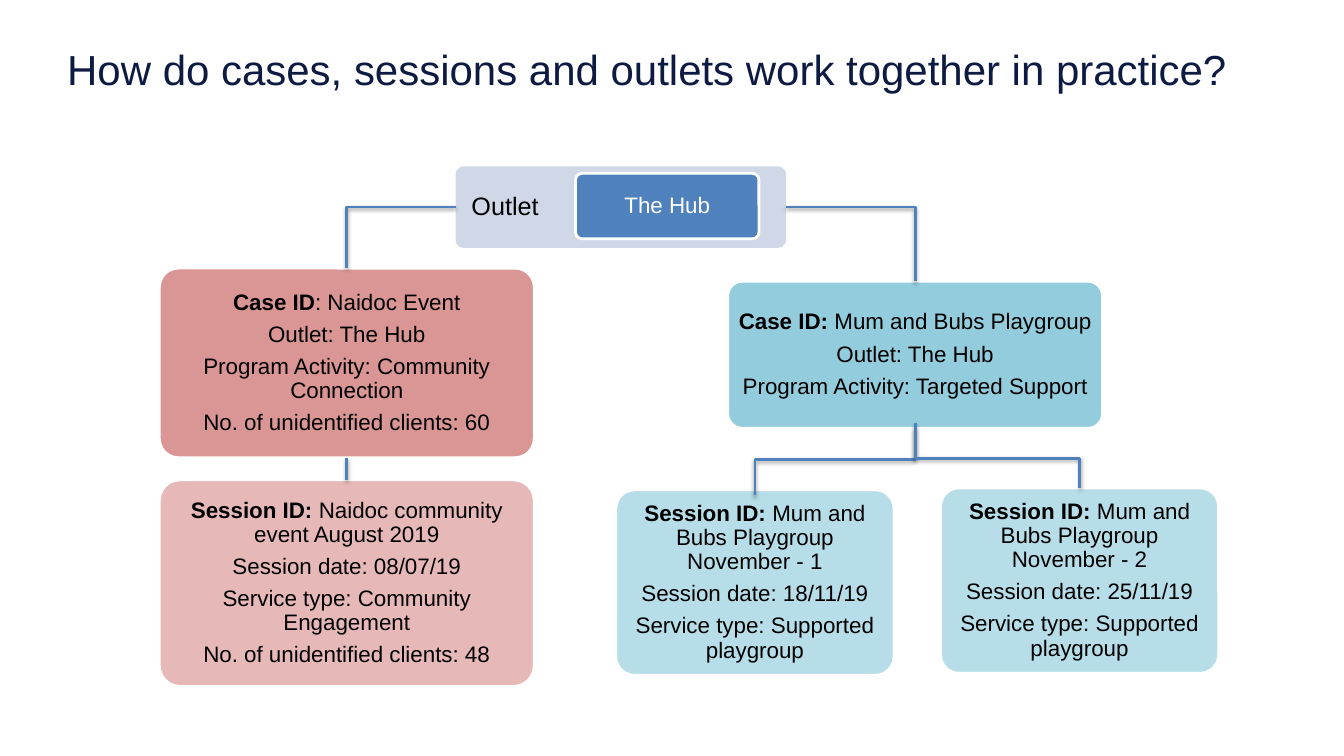
from lxml.etree import SubElement
from pptx import Presentation
from pptx.dml.color import RGBColor
from pptx.enum.shapes import MSO_CONNECTOR, MSO_SHAPE
from pptx.enum.text import MSO_ANCHOR, PP_ALIGN
from pptx.oxml.ns import qn
from pptx.util import Pt

HEX = {
    "navy": "0D1B43", "black": "000000", "white": "FFFFFF",
    "pale": "D0D8E8", "blue": "4F81BD",
    "red": "D99694", "pink": "E6B9B8",
    "teal": "93CDDD", "aqua": "B7DEE8",
}


def color(name):
    return RGBColor.from_string(HEX[name])


def write(shape, paras, size, ink, pad):
    """Fill a shape with centred paragraphs, each a list of (text, bold) runs."""
    frame = shape.text_frame
    frame.word_wrap = True
    frame.vertical_anchor = MSO_ANCHOR.MIDDLE
    frame.margin_left = frame.margin_right = Pt(pad)
    frame.margin_top = frame.margin_bottom = Pt(pad)
    for i, runs in enumerate(paras):
        para = frame.add_paragraph() if i else frame.paragraphs[0]
        para.alignment = PP_ALIGN.CENTER
        para.line_spacing = 0.9
        para.space_after = Pt(0.35 * size)
        for text, bold in runs:
            run = para.add_run()
            run.text = text
            font = run.font
            font.name, font.size, font.bold = "Arial", Pt(size), bold
            font.color.rgb = color(ink)


def card(slide, box, fill, paras=(), ink="black", pad=5, edge=True):
    shape = slide.shapes.add_shape(MSO_SHAPE.ROUNDED_RECTANGLE, *map(Pt, box))
    shape.shadow.inherit = False
    shape.adjustments[0] = 0.1
    shape.fill.solid()
    shape.fill.fore_color.rgb = color(fill)
    if edge:
        shape.line.color.rgb = color("white")
        shape.line.width = Pt(2)
    else:
        shape.line.fill.background()
    write(shape, paras, 16, ink, pad)
    return shape


def record(head, rest, *lines):
    """Bold key with its value, then plain lines."""
    return [[(head, True), (rest, False)]] + [[(line, False)] for line in lines]


def style(line):
    """Blue stroke with a soft shadow straight below."""
    line.line.color.rgb = color("blue")
    line.line.width = Pt(2)
    props = line._element.spPr
    effects = SubElement(props, qn("a:effectLst"))
    shade = SubElement(effects, qn("a:outerShdw"), blurRad=str(Pt(3.1)),
                       dist=str(Pt(1.6)), dir="5400000", rotWithShape="0")
    tint = SubElement(shade, qn("a:srgbClr"), val=HEX["black"])
    SubElement(tint, qn("a:alpha"), val="38000")


def join(slide, start, side, end, bent=False):
    """Link a side of one card to the top of another, with one bend or none."""
    kind = MSO_CONNECTOR.ELBOW if bent else MSO_CONNECTOR.STRAIGHT
    line = slide.shapes.add_connector(kind, 0, 0, 0, 0)
    line.begin_connect(start, side)
    line.end_connect(end, 0)
    if bent:
        line._element.spPr.find(qn("a:prstGeom")).set("prst", "bentConnector2")
    style(line)


def fork(slide, start, end, lap):
    """Run down, across and down from one card to another, lapping each edge."""
    x1, x2 = (s.left + s.width // 2 for s in (start, end))
    y1 = start.top + start.height - Pt(lap[0])
    y2 = end.top + Pt(lap[1])
    midx, midy = (x1 + x2) // 2, (y1 + y2) // 2
    dx, dy = (x2 - x1) // 2, (y2 - y1) // 2
    # Lay the elbow on its side, then turn it a quarter
    line = slide.shapes.add_connector(
        MSO_CONNECTOR.ELBOW, midx - dy, midy + dx, midx + dy, midy - dx)
    line._element.spPr.find(qn("a:xfrm")).set("rot", "5400000")
    style(line)


def title(slide, box):
    shape = slide.shapes.add_textbox(*map(Pt, box))
    write(shape, [[("How do cases, sessions and outlets work together "
                    "in practice?", False)]], 30, "navy", 0)
    shape.text_frame.vertical_anchor = MSO_ANCHOR.TOP
    para = shape.text_frame.paragraphs[0]
    para.alignment = PP_ALIGN.LEFT
    para.line_spacing = 1.0
    para.space_after = Pt(0)


def outlet(slide, box):
    x, y, wide, high = box
    band = card(slide, box, "pale", edge=False)
    label = slide.shapes.add_textbox(Pt(x), Pt(y), Pt(0.3 * wide), Pt(high))
    write(label, [[("Outlet", False)]], 18, "black", 10)
    card(slide, (x + 85.7, y + 5, 131, 46.8), "blue",
         [[("The Hub", False)]], "white")
    return band


def event(slide, box, hub):
    """Left branch: one case above one session."""
    x, y, wide, high = box
    case = card(slide, (x, y, wide, 135.4), "red", record(
        "Case ID", ": Naidoc Event", "Outlet: The Hub",
        "Program Activity: Community Connection",
        "No. of unidentified clients: 60"))
    meet = card(slide, (x, y + high - 147.6, wide, 147.6), "pink", record(
        "Session ID: ", "Naidoc community event August 2019",
        "Session date: 08/07/19", "Service type: Community Engagement",
        "No. of unidentified clients: 48"))
    join(slide, case, 2, meet)
    join(slide, hub, 1, case, bent=True)


def group(slide, box, hub):
    """Right branch: one case above two sessions."""
    x, y, wide, high = box
    case = card(slide, (x + 79.9, y, 267.8, 105.1), "teal", record(
        "Case ID: ", "Mum and Bubs Playgroup", "Outlet: The Hub",
        "Program Activity: Targeted Support"), pad=3.6)
    join(slide, hub, 3, case, bent=True)
    w, h = 198.7, 132.5
    visits = [
        (x, y + high - h, 1, "18/11/19", (4, 4)),
        (x + wide - w, y + high - h - 1.4, 2, "25/11/19", (0, 0)),
    ]
    for left, top, num, date, lap in visits:
        meet = card(slide, (left, top, w, h), "aqua", record(
            "Session ID: ", f"Mum and Bubs Playgroup November - {num}",
            f"Session date: {date}",
            "Service type: Supported playgroup"), pad=3.6)
        fork(slide, case, meet, lap)


def main():
    deck = Presentation()
    deck.slide_width, deck.slide_height = Pt(960), Pt(540)
    slide = deck.slides.add_slide(deck.slide_layouts[6])
    title(slide, (48, 31, 864, 45))
    hub = outlet(slide, (325.4, 118.8, 236.2, 58.3))
    event(slide, (113.8, 191.5, 267.8, 298.8), hub)
    group(slide, (439.9, 200.9, 430.6, 281.5), hub)
    deck.save("out.pptx")


if __name__ == "__main__":
    main()
